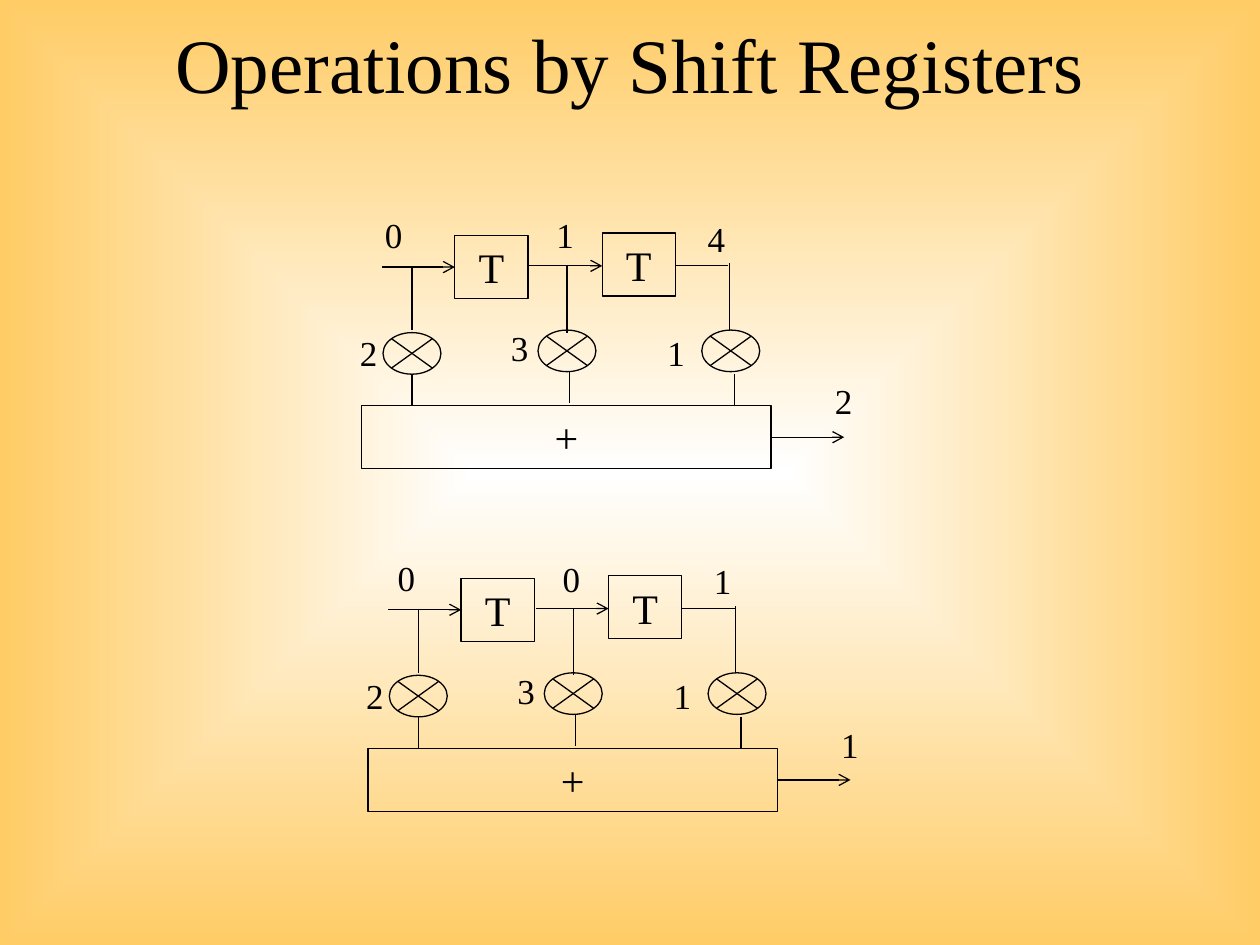
from dataclasses import dataclass

from lxml.etree import SubElement
from pptx import Presentation
from pptx.dml.color import RGBColor
from pptx.enum.shapes import MSO_CONNECTOR, MSO_SHAPE
from pptx.enum.text import MSO_ANCHOR, PP_ALIGN
from pptx.oxml.ns import qn
from pptx.shapes.autoshape import Shape
from pptx.shapes.shapetree import GroupShapes, SlideShapes
from pptx.slide import Slide
from pptx.util import Inches, Pt

BLACK = RGBColor(0x00, 0x00, 0x00)
WHITE = RGBColor(0xFF, 0xFF, 0xFF)
AMBER = RGBColor(0xFF, 0xCC, 0x66)
FONT = "Times New Roman"
LINE_WIDTH = Pt(0.75)
JUNCTION_SIZE = (0.46, 0.33)
REGISTER_SIZE = (0.58, 0.5)
ADDER_SIZE = (3.25, 0.5)
LABEL_SIZE = (0.29, 0.44)


@dataclass(frozen=True)
class Label:
    digit: str
    x: float
    y: float


@dataclass(frozen=True)
class Wire:
    start: tuple[float, float]
    end: tuple[float, float]
    arrow: bool = False


@dataclass(frozen=True)
class Circuit:
    left: float
    top: float
    labels: tuple[Label, ...]


# Positions inside a circuit are measured from its left and top.
REGISTERS = ((0.74, 0.02), (1.91, 0))
JUNCTIONS = ((0.17, 0.79), (1.4, 0.77), (2.7, 0.77))
ADDER = (0, 1.37)
WIRES = (
    Wire((0.16, 0.27), (0.74, 0.27), arrow=True),
    Wire((1.33, 0.26), (1.91, 0.26), arrow=True),
    Wire((2.49, 0.26), (2.91, 0.26)),
    Wire((0.4, 0.27), (0.4, 0.77)),
    Wire((1.63, 0.26), (1.63, 0.79)),
    Wire((2.92, 0.24), (2.92, 0.77)),
    Wire((0.4, 1.12), (0.4, 1.37)),
    Wire((1.65, 1.1), (1.65, 1.35)),
    Wire((2.96, 1.12), (2.96, 1.37)),
    Wire((3.25, 1.62), (3.83, 1.62), arrow=True),
)
COEFFICIENTS = (
    Label("2", -0.09, 0.73),
    Label("3", 1.11, 0.69),
    Label("1", 2.35, 0.73),
)
CIRCUITS = (
    Circuit(2.87, 1.85, COEFFICIENTS + (
        Label("0", 0.11, -0.21),
        Label("1", 1.47, -0.21),
        Label("4", 2.67, -0.18),
        Label("2", 3.68, 1.11),
    )),
    Circuit(2.92, 4.57, COEFFICIENTS + (
        Label("0", 0.16, -0.21),
        Label("0", 1.47, -0.2),
        Label("1", 2.67, -0.18),
        Label("1", 3.68, 1.12),
    )),
)


def set_text(shape: Shape, text: str, size: int) -> None:
    """Write one centred line, free of side margins."""
    frame = shape.text_frame
    frame.word_wrap = True
    frame.margin_left = frame.margin_right = 0
    frame.vertical_anchor = MSO_ANCHOR.MIDDLE
    paragraph = frame.paragraphs[0]
    paragraph.text = text
    paragraph.alignment = PP_ALIGN.CENTER
    paragraph.font.name = FONT
    paragraph.font.size = Pt(size)
    paragraph.font.color.rgb = BLACK


def add_text(shapes: SlideShapes, text: str, font_size: int, position: tuple[float, float],
             size: tuple[float, float]) -> None:
    box = shapes.add_textbox(*map(Inches, position + size))
    set_text(box, text, font_size)


def add_outline(shapes: GroupShapes, kind: MSO_SHAPE, position: tuple[float, float],
                size: tuple[float, float], text: str = "") -> None:
    outline = shapes.add_shape(kind, *map(Inches, position + size))
    outline.shadow.inherit = False
    outline.fill.background()
    outline.line.color.rgb = BLACK
    outline.line.width = LINE_WIDTH
    if text:
        set_text(outline, text, 24)


def add_wire(shapes: GroupShapes, start: tuple[float, float], end: tuple[float, float],
             arrow: bool) -> None:
    wire = shapes.add_connector(MSO_CONNECTOR.STRAIGHT, *map(Inches, start + end))
    wire.line.color.rgb = BLACK
    wire.line.width = LINE_WIDTH
    properties = wire.element.spPr
    if arrow:
        SubElement(properties.find(qn("a:ln")), qn("a:tailEnd"), type="arrow")
    SubElement(properties, qn("a:effectLst"))


def draw_circuit(slide: Slide, circuit: Circuit) -> None:
    def place(point: tuple[float, float]) -> tuple[float, float]:
        return circuit.left + point[0], circuit.top + point[1]

    parts = slide.shapes.add_group_shape().shapes
    for wire in WIRES:
        add_wire(parts, place(wire.start), place(wire.end), wire.arrow)
    for register in REGISTERS:
        add_outline(parts, MSO_SHAPE.RECTANGLE, place(register), REGISTER_SIZE, "T")
    for junction in JUNCTIONS:
        add_outline(parts, MSO_SHAPE.FLOWCHART_SUMMING_JUNCTION, place(junction), JUNCTION_SIZE)
    add_outline(parts, MSO_SHAPE.RECTANGLE, place(ADDER), ADDER_SIZE, "+")
    for label in circuit.labels:
        add_text(slide.shapes, label.digit, 20, place((label.x, label.y)), LABEL_SIZE)


def paint_background(slide: Slide) -> None:
    """Fade from white in the centre to amber at the edges."""
    fill = slide.background.fill
    fill.gradient()
    for stop, color in zip(fill.gradient_stops, (WHITE, AMBER)):
        stop.color.rgb = color
    gradient = slide.element.find(".//" + qn("a:gradFill"))
    gradient.remove(gradient.find(qn("a:lin")))
    shape_path = SubElement(gradient, qn("a:path"), path="shape")
    SubElement(shape_path, qn("a:fillToRect"), l="50000", t="50000", r="50000", b="50000")


def main() -> None:
    presentation = Presentation()
    presentation.slide_width = Inches(10)
    presentation.slide_height = Inches(7.5)
    slide = presentation.slides.add_slide(presentation.slide_layouts[6])
    paint_background(slide)
    add_text(slide.shapes, "Operations by Shift Registers", 44, (0.75, 0), (8.5, 1))
    for circuit in CIRCUITS:
        draw_circuit(slide, circuit)
    presentation.save("out.pptx")


if __name__ == "__main__":
    main()
